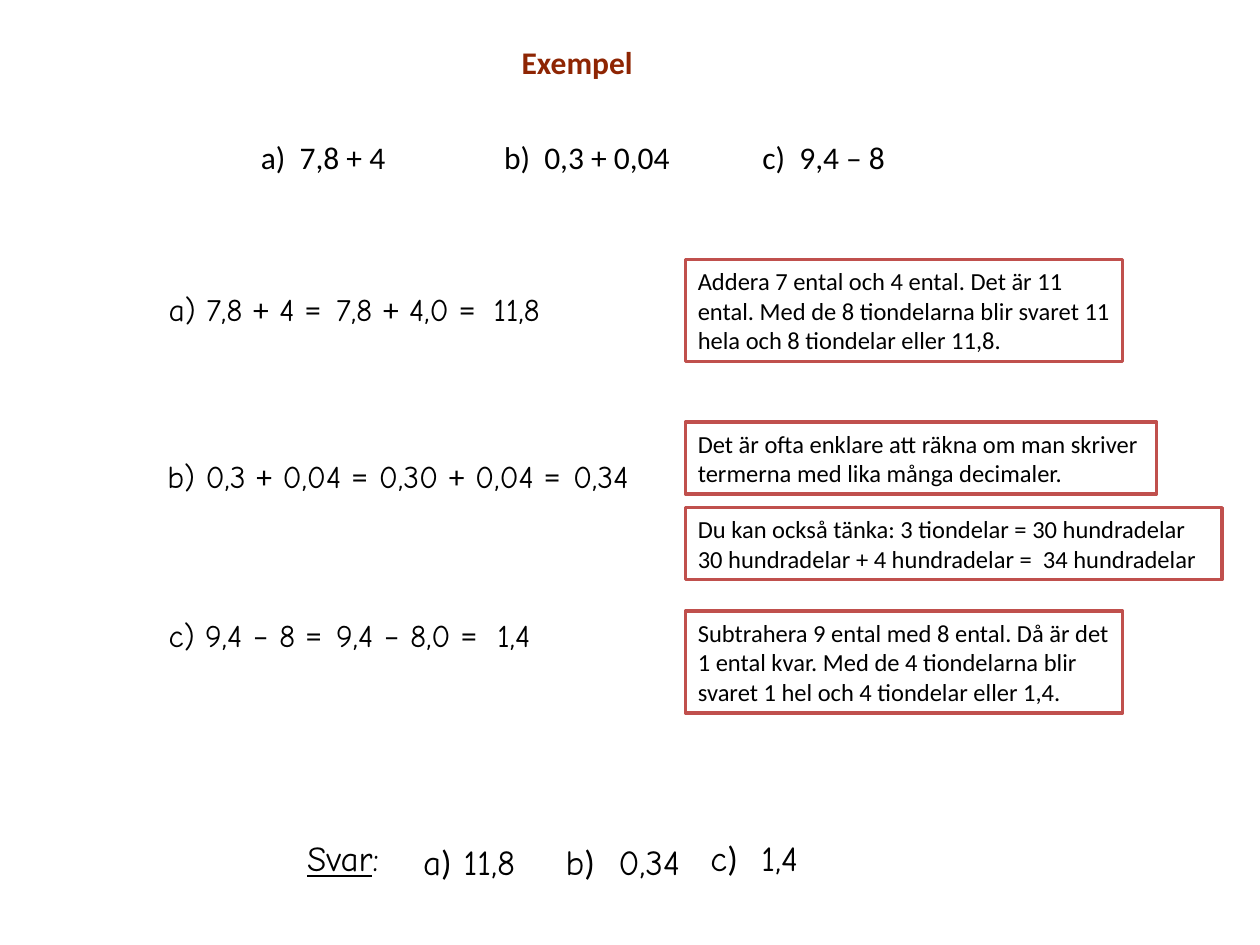
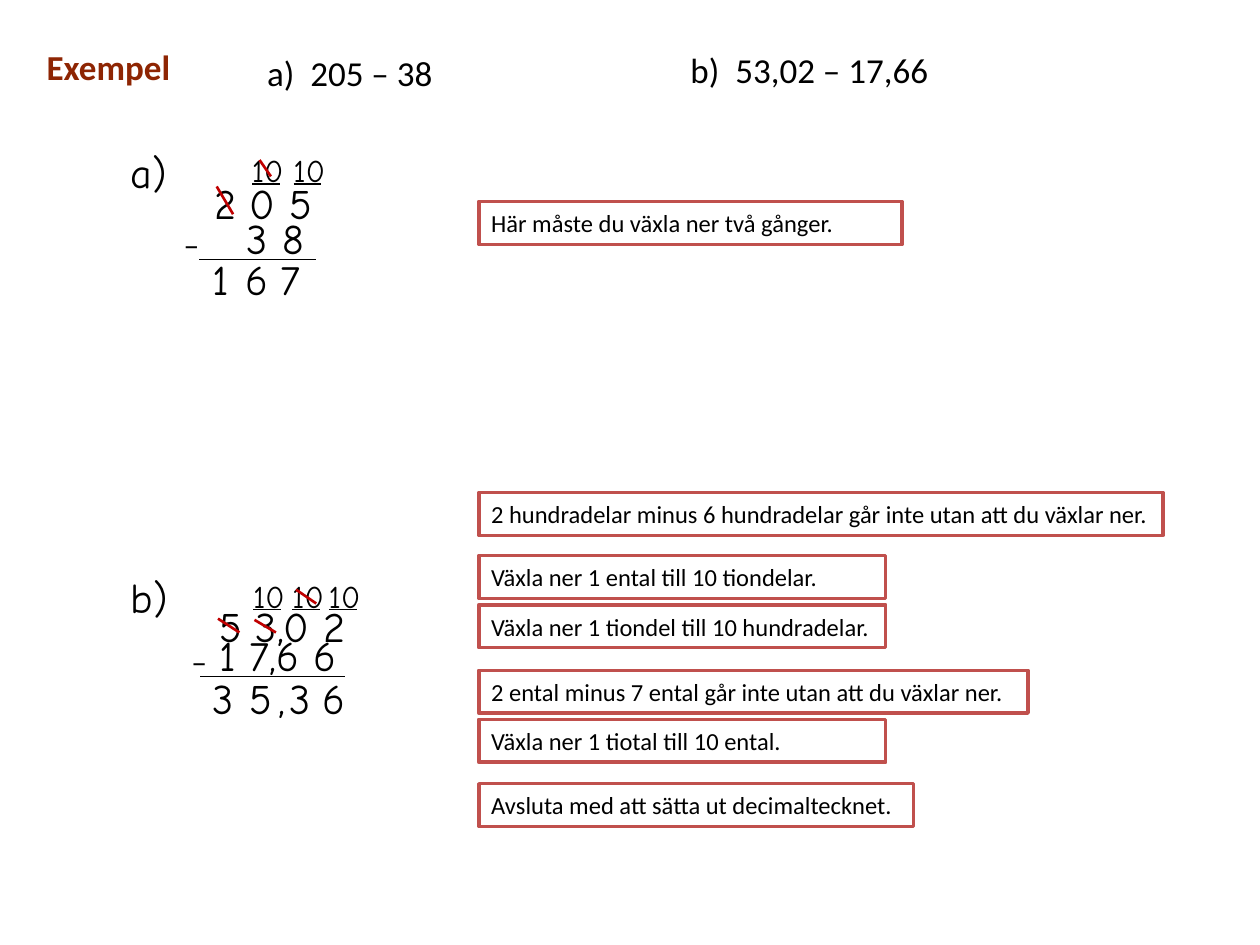
from dataclasses import dataclass
from itertools import groupby

from lxml.etree import SubElement
from pptx import Presentation
from pptx.dml.color import RGBColor
from pptx.enum.shapes import MSO_CONNECTOR, MSO_SHAPE
from pptx.enum.text import MSO_ANCHOR, MSO_AUTO_SIZE, PP_ALIGN
from pptx.oxml.ns import qn
from pptx.util import Pt

SCALE = 9144  # EMU per px, 100 px to the inch
TITLE_ONLY = 5


@dataclass(frozen=True)
class Theme:
    print_font: str = "Calibri"
    hand_font: str = "Comic Neue"
    ink: RGBColor = RGBColor(0, 0, 0)
    paper: RGBColor = RGBColor(255, 255, 255)
    title: RGBColor = RGBColor(0x8E, 0x25, 0x03)
    frame: RGBColor = RGBColor(0xC0, 0x50, 0x4D)
    strike: RGBColor = RGBColor(0xC0, 0, 0)
    note_size: int = 14
    text_size: int = 18
    large_size: int = 20
    digit_size: int = 24


THEME = Theme()


def px(*lengths):
    return [length * SCALE for length in lengths]


def add_run(paragraph, text, size=THEME.text_size, font=THEME.print_font,
            color=THEME.ink, bold=False, underline=False):
    run = paragraph.add_run()
    run.text = text
    run.font.size = Pt(size)
    run.font.name = font
    run.font.color.rgb = color
    run.font.bold = bold
    run.font.underline = underline


def add_text(shapes, box, text, symbols="", font=THEME.hand_font, **style):
    """Add a text box; the characters in symbols are set in the print font."""
    frame = shapes.add_textbox(*px(*box)).text_frame
    frame.word_wrap = True
    for is_symbol, characters in groupby(text, lambda character: character in symbols):
        add_run(frame.paragraphs[0], "".join(characters),
                font=THEME.print_font if is_symbol else font, **style)


def add_line(shapes, ends, color=THEME.ink, width=1):
    line = shapes.add_connector(MSO_CONNECTOR.STRAIGHT, *px(*ends))
    line.line.color.rgb = color
    line.line.width = Pt(width)
    SubElement(line._element.spPr, qn("a:effectLst"))


def add_title(slide, box, size):
    title = slide.shapes.title
    title.left, title.top, title.width, title.height = px(*box)
    frame = title.text_frame
    frame.auto_size = MSO_AUTO_SIZE.NONE
    frame.vertical_anchor = MSO_ANCHOR.TOP
    frame.paragraphs[0].alignment = PP_ALIGN.LEFT
    add_run(frame.paragraphs[0], "Exempel", size=size, color=THEME.title, bold=True)


def add_task(slide, box, text, size):
    """Add a task as a table of one cell."""
    table = slide.shapes.add_table(1, 1, *px(*box)).table
    table.first_row = table.horz_banding = False
    cell = table.cell(0, 0)
    cell.fill.background()
    cell.margin_left, cell.margin_right = px(5, 5)
    cell.margin_top = cell.margin_bottom = 0
    add_run(cell.text_frame.paragraphs[0], text, size=size)


def add_note(slide, box, *lines):
    note = slide.shapes.add_shape(MSO_SHAPE.RECTANGLE, *px(*box))
    note.shadow.inherit = False
    note.fill.solid()
    note.fill.fore_color.rgb = THEME.paper
    note.line.color.rgb = THEME.frame
    note.line.width = Pt(2)
    frame = note.text_frame
    frame.word_wrap = True
    for index, line in enumerate(lines):
        paragraph = frame.add_paragraph() if index else frame.paragraphs[0]
        paragraph.alignment = PP_ALIGN.LEFT
        add_run(paragraph, line, size=THEME.note_size)


def add_equation(slide, left, top, parts):
    """Place the steps of a calculation on one line, each at its own offset."""
    for offset, text in parts:
        add_text(slide.shapes, (left + offset, top, 190, 40), text, symbols="+–=")


def add_answers(slide, left, top):
    add_text(slide.shapes, (left, top, 104, 44), "", size=THEME.large_size)
    paragraph = slide.shapes[-1].text_frame.paragraphs[0]
    hand = {"size": THEME.large_size, "font": THEME.hand_font}
    add_run(paragraph, "Svar", underline=True, **hand)
    add_run(paragraph, ":", **hand)
    for x, y, text in ((92, 3, "a) 11,8"), (205, 3, "b)  0,34"), (320, 0, "c)  1,4")):
        add_text(slide.shapes, (left + x, top + y, 155, 44), text,
                 symbols=")", size=THEME.large_size)


def add_carry(slide, left, top):
    """Add an underlined 10 above a column."""
    group = slide.shapes.add_group_shape()
    add_line(group.shapes, (left + 10, top + 31, left + 32, top + 31), width=0.75)
    add_text(group.shapes, (left, top, 59, 40), "10")


def add_subtraction(slide, left, top, label, minuend, minus, subtrahend,
                    rule, result, result_top, carries, strikes):
    """Set out a column subtraction; all offsets count from its top left corner."""
    def write(x, y, text, width=159, **style):
        add_text(slide.shapes, (left + x, top + y, width, 50), text, **style)

    write(0, 0, label, width=54, size=THEME.digit_size)
    write(*minuend, size=THEME.digit_size)
    write(*minus, "–", width=40, font=THEME.print_font)
    write(*subtrahend, size=THEME.digit_size)
    start, end, height = rule
    add_line(slide.shapes, (left + start, top + height, left + end, top + height))
    for x, digit in result:
        write(x, result_top, digit, width=40, size=THEME.digit_size)
    for x in carries:
        add_carry(slide, left + x, top + 4)
    for x1, y1, x2, y2 in strikes:
        add_line(slide.shapes, (left + x1, top + y1, left + x2, top + y2),
                 color=THEME.strike, width=1.5)


def add_slide(presentation):
    return presentation.slides.add_slide(presentation.slide_layouts[TITLE_ONLY])


def build_decimals_slide(presentation):
    slide = add_slide(presentation)
    add_title(slide, (404, 29, 130, 40), THEME.text_size)
    for left, task in ((202, "a)  7,8 + 4"), (395, "b)  0,3 + 0,04"), (600, "c)  9,4 – 8")):
        add_task(slide, (left, 111, 177, 30), task, THEME.text_size)

    add_equation(slide, 124, 225, ((0, "a) 7,8 + 4 ="), (133, "7,8 + 4,0 ="), (258, "11,8")))
    add_equation(slide, 123, 358,
                 ((0, "b) 0,3 + 0,04 ="), (168, "0,30 + 0,04 ="), (322, "0,34")))
    add_equation(slide, 124, 484, ((0, "c) 9,4 – 8 ="), (133, "9,4 – 8,0 ="), (261, "1,4")))

    notes = (
        (206, 347, 81, "Addera 7 ental och 4 ental. Det är 11 ental. Med de 8 "
         "tiondelarna blir svaret 11 hela och 8 tiondelar eller 11,8."),
        (335, 374, 57, "Det är ofta enklare att räkna om man skriver termerna "
         "med lika många decimaler."),
        (403, 426, 57, "Du kan också tänka: 3 tiondelar = 30 hundradelar",
         "30 hundradelar + 4 hundradelar =  34 hundradelar"),
        (485, 347, 81, "Subtrahera 9 ental med 8 ental. Då är det 1 ental kvar. "
         "Med de 4 tiondelarna blir svaret 1 hel och 4 tiondelar eller 1,4."),
    )
    for top, width, height, *lines in notes:
        add_note(slide, (544, top, width, height), *lines)
    add_answers(slide, 234, 659)


def build_borrowing_slide(presentation):
    slide = add_slide(presentation)
    add_title(slide, (27, 31, 140, 44), THEME.large_size)
    add_task(slide, (207, 42, 181, 33), "a)  205 – 38", THEME.large_size)
    add_task(slide, (543, 40, 216, 33), "b)  53,02 – 17,66", THEME.large_size)

    add_subtraction(
        slide, 94, 111, "a)", minuend=(66, 25, "2 0 5"), minus=(42, 63),
        subtrahend=(92, 53, "3 8"), rule=(64, 157, 95),
        result=((65, "1"), (91, "6"), (119, "7")), result_top=85,
        carries=(96, 129), strikes=((78, 37, 91, 59), (112, 16, 121, 29)))
    add_subtraction(
        slide, 94, 449, "b)", minuend=(70, 23, "5 3,0 2"), minus=(48, 56),
        subtrahend=(70, 46, "1 7,6 6"), rule=(65, 180, 88),
        result=((65, "3"), (94, "5"), (117, ","), (126, "3"), (152, "6")), result_top=80,
        carries=(97, 128, 157),
        strikes=((79, 42, 96, 53), (108, 43, 125, 53), (141, 19, 157, 30)))

    notes = (
        (160, 336, "Här måste du växla ner två gånger."),
        (391, 543, "2 hundradelar minus 6 hundradelar går inte utan att du växlar ner."),
        (441, 323, "Växla ner 1 ental till 10 tiondelar."),
        (480, 323, "Växla ner 1 tiondel till 10 hundradelar."),
        (532, 436, "2 ental minus 7 ental går inte utan att du växlar ner."),
        (571, 323, "Växla ner 1 tiotal till 10 ental."),
        (622, 345, "Avsluta med att sätta ut decimaltecknet."),
    )
    for top, width, text in notes:
        add_note(slide, (380, top, width, 34), text)


def main():
    presentation = Presentation()
    presentation.slide_width, presentation.slide_height = px(1000, 750)
    build_decimals_slide(presentation)
    build_borrowing_slide(presentation)
    presentation.save("out.pptx")


if __name__ == "__main__":
    main()
